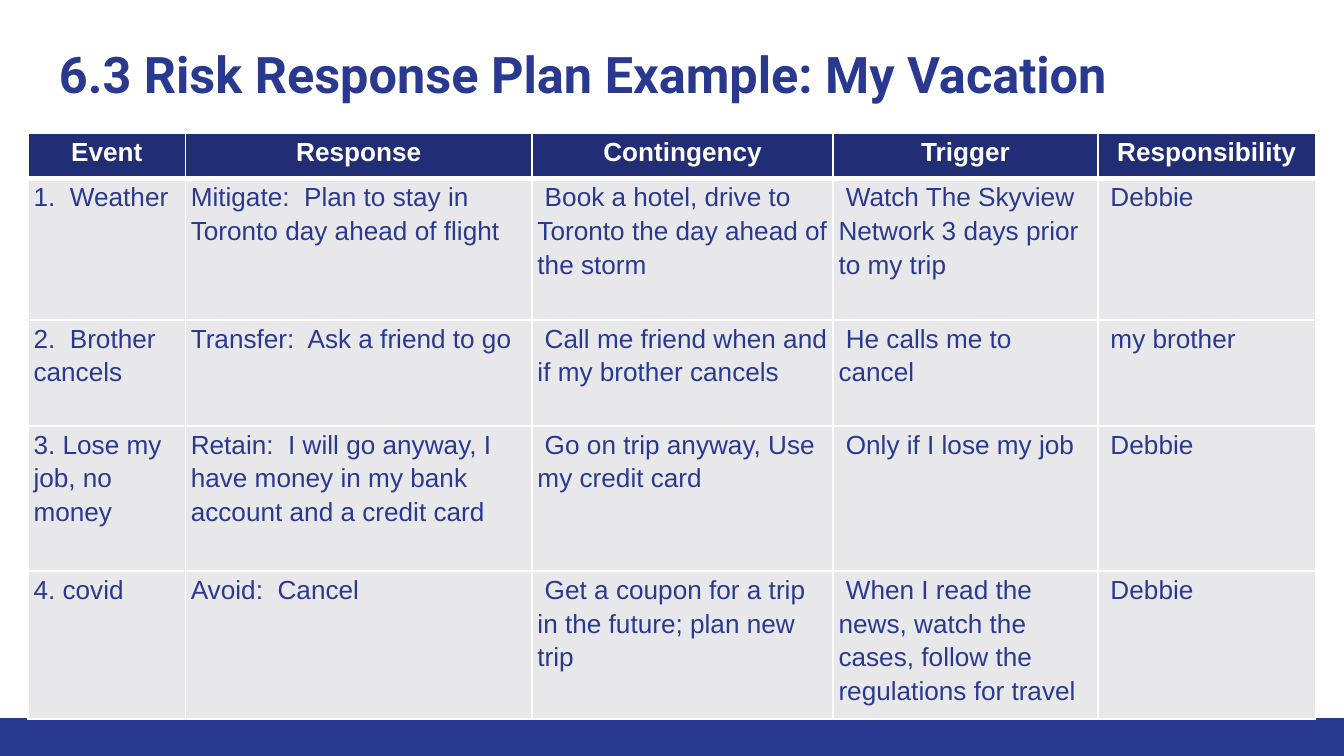
from pptx import Presentation
from pptx.dml.color import RGBColor
from pptx.enum.shapes import MSO_SHAPE
from pptx.enum.text import PP_ALIGN
from pptx.oxml import parse_xml
from pptx.oxml.ns import nsdecls
from pptx.util import Inches, Pt

RECTANGLE = MSO_SHAPE.RECTANGLE
CENTER, LEFT = PP_ALIGN.CENTER, PP_ALIGN.LEFT

COLORS = {"blue": "2A3990", "header": "212D74", "body": "E8E8EB", "white": "FFFFFF"}
COLUMN_WIDTHS = [1.17, 2.58, 2.24, 1.97, 1.62]
ROW_HEIGHTS = [0.34, 1.05, 0.79, 1.08, 1.1]
RISKS = [
    ["Event", "Response", "Contingency", "Trigger", "Responsibility"],
    ["1.  Weather", "Mitigate:  Plan to stay in Toronto day ahead of flight",
     " Book a hotel, drive to Toronto the day ahead of the storm",
     " Watch The Skyview Network 3 days prior to my trip", " Debbie"],
    ["2.  Brother cancels", "Transfer:  Ask a friend to go",
     " Call me friend when and if my brother cancels",
     " He calls me to cancel", " my brother"],
    ["3. Lose my job, no money",
     "Retain:  I will go anyway, I have money in my bank account and a credit card",
     " Go on trip anyway, Use my credit card",
     " Only if I lose my job", " Debbie"],
    ["4. covid", "Avoid:  Cancel",
     " Get a coupon for a trip in the future; plan new trip",
     " When I read the news, watch the cases, follow the regulations for travel",
     " Debbie"],
]


def set_font(paragraph, name, size, color, bold):
    font = paragraph.font
    font.name, font.size, font.bold = name, Pt(size), bold
    font.color.rgb = RGBColor.from_string(COLORS[color])


def add_borders(cell, bottom_width):
    properties = cell._tc.get_or_add_tcPr()
    for side, width in zip("LRTB", (1, 1, 1, bottom_width)):
        properties.append(parse_xml(
            f'<a:ln{side} {nsdecls("a")} w="{Pt(width)}"><a:solidFill>'
            f'<a:srgbClr val="{COLORS["white"]}"/></a:solidFill></a:ln{side}>'))


prs = Presentation()
prs.slide_width, prs.slide_height = Inches(10), Inches(5.625)
slide = prs.slides.add_slide(prs.slide_layouts[6])

footer_height = int(prs.slide_height * 0.05)
footer = slide.shapes.add_shape(
    RECTANGLE, 0, prs.slide_height - footer_height, prs.slide_width, footer_height)
footer.shadow.inherit = False
footer.fill.solid()
footer.fill.fore_color.rgb = RGBColor.from_string(COLORS["blue"])
footer.line.fill.background()

title = slide.shapes.add_textbox(Inches(0.34), Inches(0.22), Inches(9.32), Inches(0.66)).text_frame
title.word_wrap = True
title.margin_left = title.margin_right = title.margin_top = title.margin_bottom = Inches(0.1)
title.text = "6.3 Risk Response Plan Example: My Vacation"
set_font(title.paragraphs[0], "Roboto", 27, "blue", True)

plan = slide.shapes.add_table(
    len(ROW_HEIGHTS), len(COLUMN_WIDTHS), Inches(0.21), Inches(0.99),
    Inches(sum(COLUMN_WIDTHS)), Inches(sum(ROW_HEIGHTS))).table
for column, width in zip(plan.columns, COLUMN_WIDTHS):
    column.width = Inches(width)
for row, height in zip(plan.rows, ROW_HEIGHTS):
    row.height = Inches(height)

for r, entries in enumerate(RISKS):
    is_header = r == 0
    for c, entry in enumerate(entries):
        cell = plan.cell(r, c)
        cell.margin_left = cell.margin_right = Inches(0.04)
        cell.margin_top = cell.margin_bottom = 0
        add_borders(cell, 3 if is_header else 1)
        cell.fill.solid()
        cell.fill.fore_color.rgb = RGBColor.from_string(COLORS["header" if is_header else "body"])
        cell.text = entry
        paragraph = cell.text_frame.paragraphs[0]
        paragraph.alignment = CENTER if is_header else LEFT
        paragraph.line_spacing = 1.15
        paragraph.space_after = Pt(10)
        set_font(paragraph, "Arial", 14, "white" if is_header else "blue", is_header)

prs.save("out.pptx")
